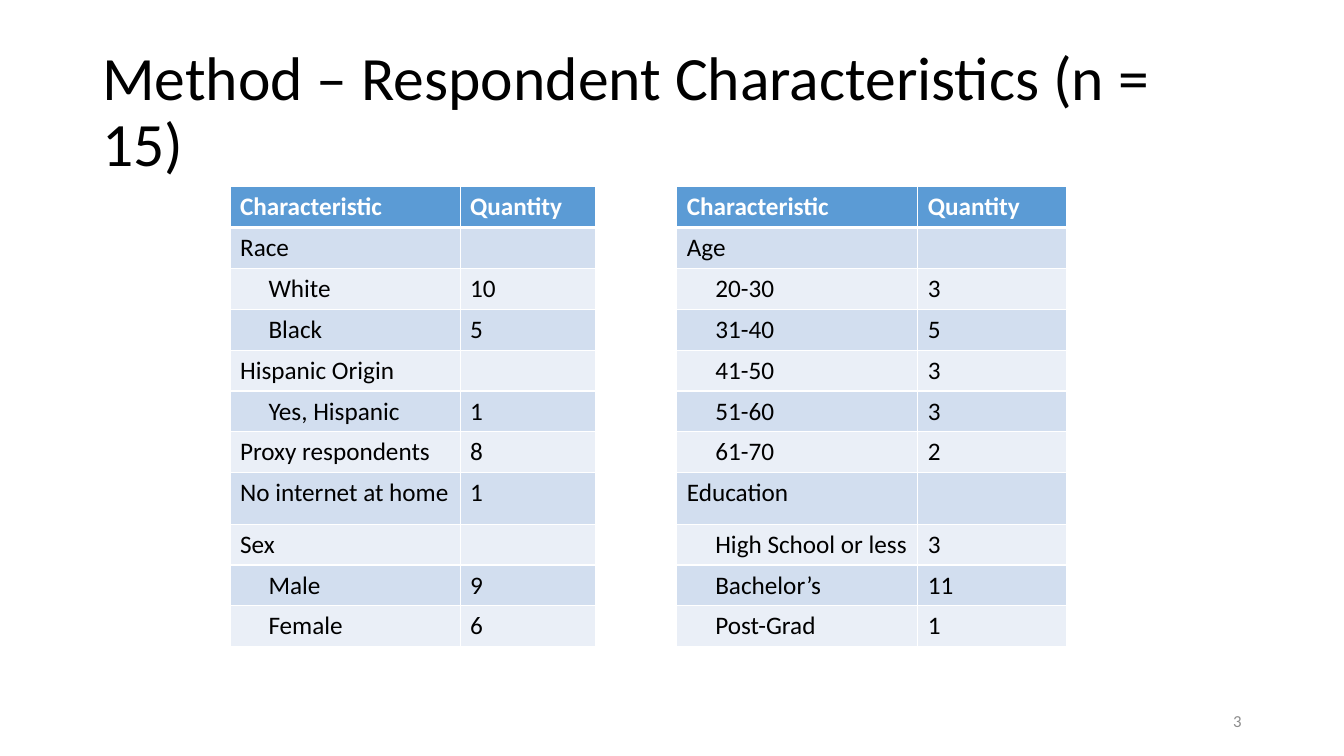
from dataclasses import dataclass

from lxml.etree import SubElement
from pptx import Presentation
from pptx.dml.color import RGBColor
from pptx.enum.text import MSO_ANCHOR, PP_ALIGN
from pptx.oxml.ns import qn
from pptx.util import Pt

COLORS = {
    "text": "000000",
    "number": "8C8C8C",
    "white": "FFFFFF",
    "header": "5B9BD5",
    "band_dark": "D2DEEF",
    "band_light": "EAEFF7",
}
FONT = "Calibri"
INDENT = 20.3
GAP_COL = 2
COL_WIDTHS = [164.4, 96.5, 58.3, 172.1, 106.6]
ROW_HEIGHT = 29.2
TALL_ROW, TALL_HEIGHT = 7, 36.7


@dataclass
class Entry:
    label: str
    quantity: str = ""
    nested: bool = False


@dataclass
class Label:
    text: str
    left: float
    top: float
    width: float
    height: float
    size: float
    color: str
    align: PP_ALIGN = PP_ALIGN.LEFT
    spacing: float = 1.0


LABELS = [
    Label("Method – Respondent Characteristics (n = 15)",
          66, 28.75, 828, 104.4, 44, "text", spacing=0.9),
    Label("3", 678, 500.5, 216, 28.75, 12, "number", PP_ALIGN.RIGHT),
]
HEADING = Entry("Characteristic", "Quantity")
LEFT_ENTRIES = [
    HEADING,
    Entry("Race"),
    Entry("White", "10", True),
    Entry("Black", "5", True),
    Entry("Hispanic Origin"),
    Entry("Yes, Hispanic", "1", True),
    Entry("Proxy respondents", "8"),
    Entry("No internet at home", "1"),
    Entry("Sex"),
    Entry("Male", "9", True),
    Entry("Female", "6", True),
]
RIGHT_ENTRIES = [
    HEADING,
    Entry("Age"),
    Entry("20-30", "3", True),
    Entry("31-40", "5", True),
    Entry("41-50", "3", True),
    Entry("51-60", "3", True),
    Entry("61-70", "2", True),
    Entry("Education"),
    Entry("High School or less", "3", True),
    Entry("Bachelor’s", "11", True),
    Entry("Post-Grad", "1", True),
]


def add_run(p, text: str, size: float, color: str, bold: bool = False) -> None:
    r = p.add_run()
    r.text = text
    r.font.name = FONT
    r.font.size = Pt(size)
    r.font.bold = bold
    r.font.color.rgb = RGBColor.from_string(COLORS[color])


def add_label(s, label: Label) -> None:
    sp = s.shapes.add_textbox(Pt(label.left), Pt(label.top), Pt(label.width), Pt(label.height))
    tf = sp.text_frame
    tf.word_wrap = True
    tf.vertical_anchor = MSO_ANCHOR.MIDDLE
    p = tf.paragraphs[0]
    p.alignment = label.align
    p.line_spacing = label.spacing
    add_run(p, label.text, label.size, label.color)


def set_borders(cell, row: int) -> None:
    tc_pr = cell._tc.get_or_add_tcPr()
    widths = {"lnL": 1, "lnR": 1, "lnT": 3 if row == 1 else 1, "lnB": 3 if row == 0 else 1}
    for side, width in widths.items():
        ln = SubElement(tc_pr, qn(f"a:{side}"), w=str(Pt(width)))
        fill = SubElement(ln, qn("a:solidFill"))
        SubElement(fill, qn("a:srgbClr"), val=COLORS["white"])


def fill_cell(cell, row: int, text: str, nested: bool = False) -> None:
    band = "header" if row == 0 else "band_dark" if row % 2 else "band_light"
    cell.fill.solid()
    cell.fill.fore_color.rgb = RGBColor.from_string(COLORS[band])
    if not text:
        return
    p = cell.text_frame.paragraphs[0]
    if nested:
        p._p.get_or_add_pPr().set("marL", str(Pt(INDENT)))
    add_run(p, text, 18, "white" if row == 0 else "text", row == 0)


def add_characteristics(s) -> None:
    heights = [ROW_HEIGHT] * len(LEFT_ENTRIES)
    heights[TALL_ROW] = TALL_HEIGHT
    table = s.shapes.add_table(len(heights), len(COL_WIDTHS), Pt(164.3), Pt(133.3),
                               Pt(sum(COL_WIDTHS)), Pt(sum(heights))).table
    table.horz_banding = False
    for col, width in zip(table.columns, COL_WIDTHS):
        col.width = Pt(width)
    for i, height in enumerate(heights):
        table.rows[i].height = Pt(height)
        for cell in table.rows[i].cells:
            set_borders(cell, i)
        table.cell(i, GAP_COL).fill.background()
        for first_col, entries in ((0, LEFT_ENTRIES), (GAP_COL + 1, RIGHT_ENTRIES)):
            entry = entries[i]
            fill_cell(table.cell(i, first_col), i, entry.label, entry.nested)
            fill_cell(table.cell(i, first_col + 1), i, entry.quantity)


def main() -> None:
    prs = Presentation()
    prs.slide_width, prs.slide_height = Pt(960), Pt(540)
    s = prs.slides.add_slide(prs.slide_layouts[6])
    for label in LABELS:
        add_label(s, label)
    add_characteristics(s)
    prs.save("out.pptx")


if __name__ == "__main__":
    main()
